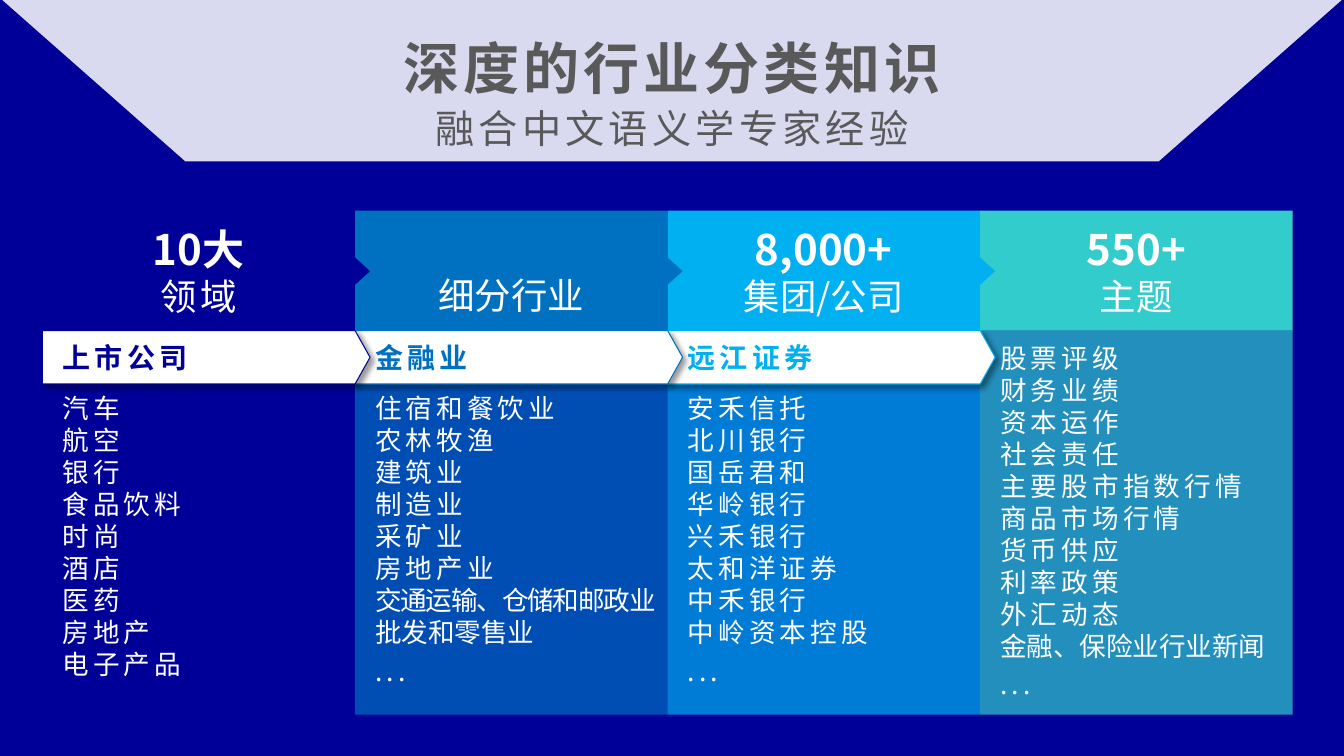
from dataclasses import dataclass

from lxml import etree
from pptx import Presentation
from pptx import util as u
from pptx.dml.color import RGBColor
from pptx.enum import shapes, text
from pptx.oxml import ns


@dataclass(frozen=True)
class Theme:
    font: str = "Noto Sans CJK SC"
    night: str = "000099"
    white: str = "FFFFFF"
    grey: str = "595959"
    columns: tuple = ("000099", "0070C0", "00B0F0", "33CCCC")
    title: float = 40
    subtitle: float = 28
    figure: float = 30
    caption: float = 26
    label: float = 20
    item: float = 19


@dataclass(frozen=True)
class Grid:
    """Four equal columns; rows for heads, labels and lists, in inches."""
    width: float = 13.33
    height: float = 7.5
    left: float = 0.42
    column: float = 3.1
    head_top: float = 2.09
    list_top: float = 3.28
    list_height: float = 3.81
    label_height: float = 0.53

    def x(self, index):
        return self.left + self.column * index


@dataclass(frozen=True)
class Line:
    words: str
    size: float
    spacing: float = 0
    bold: bool = False
    pitch: float = 0  # line height in points, 0 for the font's own


class Board:
    def __init__(self, slide, theme, grid):
        self.slide, self.theme, self.grid = slide, theme, grid
        slide.background.fill.solid()
        slide.background.fill.fore_color.rgb = RGBColor.from_string(theme.night)

    def shape(self, kind, x, y, w, h, color, opacity=100):
        shape = self.slide.shapes.add_shape(kind, *map(u.Inches, (x, y, w, h)))
        shape.shadow.inherit = False
        shape.fill.solid()
        shape.fill.fore_color.rgb = RGBColor.from_string(color)
        shape.line.fill.background()
        if opacity < 100:
            rgb = shape.element.spPr.find(".//" + ns.qn("a:srgbClr"))
            etree.SubElement(rgb, ns.qn("a:alpha")).set("val", str(opacity * 1000))
        return shape

    def fill_text(self, shape, lines, color, insets=(0, 0, 0, 0),
                  align=text.PP_ALIGN.LEFT, anchor=text.MSO_ANCHOR.MIDDLE):
        frame = shape.text_frame
        frame.word_wrap = True
        frame.auto_size = text.MSO_AUTO_SIZE.NONE
        frame.vertical_anchor = anchor
        (frame.margin_left, frame.margin_top,
         frame.margin_right, frame.margin_bottom) = map(u.Inches, insets)
        for index, line in enumerate(lines):
            paragraph = frame.add_paragraph() if index else frame.paragraphs[0]
            paragraph.alignment = align
            paragraph.space_before = u.Pt(0)
            if line.pitch:
                paragraph.line_spacing = u.Pt(line.pitch)
            run = paragraph.add_run()
            run.text = line.words
            run.font.name = self.theme.font
            run.font.size = u.Pt(line.size)
            run.font.bold = line.bold
            run.font.color.rgb = RGBColor.from_string(color)
            props = run.font._element
            props.set("spc", str(round(line.spacing * 100)))
            latin = props.find(ns.qn("a:latin"))
            east_asian = etree.Element(ns.qn("a:ea"), typeface=self.theme.font)
            latin.addnext(east_asian)

    def heading(self, placeholder, line, y, h):
        placeholder.left, placeholder.top = u.Inches(1.42), u.Inches(y)
        placeholder.width, placeholder.height = u.Inches(10.49), u.Inches(h)
        self.fill_text(placeholder, [line], self.theme.grey,
                       align=text.PP_ALIGN.CENTER, anchor=text.MSO_ANCHOR.BOTTOM)

    def banner(self, behind):
        band = self.shape(shapes.MSO_SHAPE.TRAPEZOID, 0, -0.02,
                          self.grid.width, 1.62, self.theme.white, 85)
        band.rotation = 180
        band.adjustments[0] = 1.134
        behind.element.addprevious(band.element)

    def head(self, index, lines, top_inset=0):
        g = self.grid
        head = self.shape(shapes.MSO_SHAPE.RECTANGLE, g.x(index), g.head_top,
                          g.column, g.list_top - g.head_top, self.theme.columns[index])
        self.fill_text(head, lines, self.theme.white, (0.04, top_inset, 0.04, 0),
                       text.PP_ALIGN.CENTER)

    def pointer(self, index):
        w, h = 0.29, 0.16
        center = self.grid.x(index + 1) + 0.07
        pointer = self.shape(shapes.MSO_SHAPE.ISOSCELES_TRIANGLE, center - w / 2, 2.61,
                             w, h, self.theme.columns[index])
        pointer.rotation = 90

    def topics(self, index, lines, top_inset):
        g = self.grid
        panel = self.shape(shapes.MSO_SHAPE.RECTANGLE, g.x(index), g.list_top,
                           g.column, g.list_height, self.theme.columns[index], 70)
        self.fill_text(panel, lines, self.theme.white, (0.2, top_inset, 0.04, 0.04),
                       anchor=text.MSO_ANCHOR.TOP)

    def label(self, index, words):
        g, color = self.grid, self.theme.columns[index]
        label = self.shape(shapes.MSO_SHAPE.PENTAGON, g.x(index), g.list_top,
                           g.column + 0.15, g.label_height, self.theme.white)
        label.adjustments[0] = 0.28
        label.line.color.rgb = RGBColor.from_string(color)
        label.line.width = u.Pt(0.75)
        effects = label.element.spPr.find(ns.qn("a:effectLst"))
        shadow = etree.SubElement(effects, ns.qn("a:outerShdw"), blurRad=str(u.Pt(4)),
                                  dist=str(u.Pt(3)), dir="2700000", algn="tl", rotWithShape="0")
        black = etree.SubElement(shadow, ns.qn("a:srgbClr"), val="000000")
        etree.SubElement(black, ns.qn("a:alpha"), val="40000")
        self.fill_text(label, [Line(words, self.theme.label, 3, True, 24)], color,
                       (0.2, 0, 0.04, 0))


THEME, GRID = Theme(), Grid()
LABELS = ["上市公司", "金融业", "远江证券"]
TOPICS = [
    ["汽车", "航空", "银行", "食品饮料", "时尚", "酒店", "医药", "房地产", "电子产品"],
    ["住宿和餐饮业", "农林牧渔", "建筑业", "制造业", "采矿业", "房地产业",
     "交通运输、仓储和邮政业", "批发和零售业", "..."],
    ["安禾信托", "北川银行", "国岳君和", "华岭银行", "兴禾银行", "太和洋证券",
     "中禾银行", "中岭资本控股", "..."],
    ["股票评级", "财务业绩", "资本运作", "社会责任", "主要股市指数行情", "商品市场行情",
     "货币供应", "利率政策", "外汇动态", "金融、保险业行业新闻", "..."],
]
TIGHT = {"交通运输、仓储和邮政业": -0.8, "批发和零售业": 0, "金融、保险业行业新闻": 0}
FIGURES = ["10大", None, "8,000+", "550+"]
CAPTIONS = ["领域", "细分行业", "集团/公司", "主题"]


def draw_head(board, index):
    lines = [Line(CAPTIONS[index], THEME.caption, 0 if index else 3, pitch=31.2)]
    if FIGURES[index]:
        lines.insert(0, Line(FIGURES[index], THEME.figure, bold=True))
    board.head(index, lines, 0 if FIGURES[index] else 0.48)


def main():
    deck = Presentation()
    deck.slide_width, deck.slide_height = u.Inches(GRID.width), u.Inches(GRID.height)
    slide = deck.slides.add_slide(deck.slide_layouts[0])
    board = Board(slide, THEME, GRID)

    # Banner with title and subtitle
    title, subtitle = slide.placeholders
    board.banner(behind=title)
    board.heading(title, Line("深度的行业分类知识", THEME.title, 3, True, 53), 0.2, 0.8)
    board.heading(subtitle, Line("融合中文语义学专家经验", THEME.subtitle, 3, pitch=37), 0.98, 0.52)

    # Topic lists
    for index, words in enumerate(TOPICS):
        lines = [Line(item, THEME.item, TIGHT.get(item, 3),
                      pitch=27.5 if item == "..." else 22.85) for item in words]
        board.topics(index, lines, 0.61 if index < len(LABELS) else 0.11)

    # Labels overlap from left to right
    for index in reversed(range(len(LABELS))):
        board.label(index, LABELS[index])

    # Column heads, each pointing to the next
    for index in reversed(range(len(CAPTIONS))):
        draw_head(board, index)
        if index < len(LABELS):
            board.pointer(index)

    deck.save("out.pptx")


if __name__ == "__main__":
    main()
